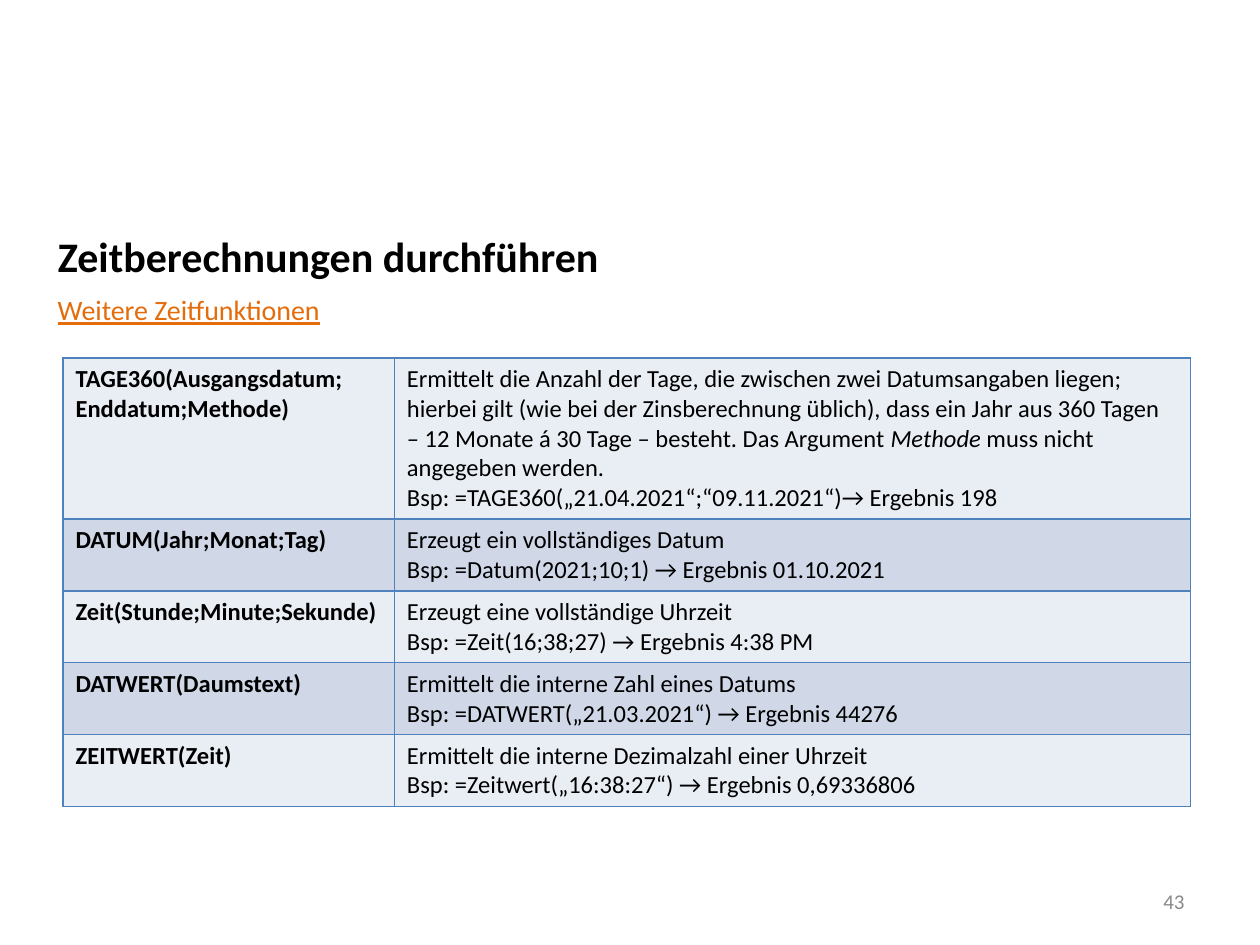
from lxml import etree
from pptx import Presentation
from pptx.dml.color import RGBColor
from pptx.enum.text import MSO_ANCHOR, PP_ALIGN
from pptx.oxml.ns import qn
from pptx.util import Inches, Pt

TOP, MIDDLE = MSO_ANCHOR.TOP, MSO_ANCHOR.MIDDLE
LEFT, RIGHT = PP_ALIGN.LEFT, PP_ALIGN.RIGHT
TITLE_ONLY = 5
FONT = "Calibri"
COLORS = {
    "text": "000000",
    "accent": "E46C0A",
    "number": "898989",
    "border": "4F81BD",
    "light": "E9EDF4",
    "dark": "D0D8E8",
}

# Function signature, then description paragraphs; each paragraph is a list of
# runs, of which every second one is italic
FUNCTIONS = [
    ("TAGE360(Ausgangsdatum; Enddatum;Methode)", [
        ["Ermittelt die Anzahl der Tage, die zwischen zwei Datumsangaben liegen; "
         "hierbei gilt (wie bei der Zinsberechnung üblich), dass ein Jahr aus "
         "360 Tagen – 12 Monate á 30 Tage – besteht. Das Argument ",
         "Methode", " muss nicht angegeben werden."],
        ["Bsp: =TAGE360(„21.04.2021“;“09.11.2021“)→ Ergebnis 198"]]),
    ("DATUM(Jahr;Monat;Tag)", [
        ["Erzeugt ein vollständiges Datum"],
        ["Bsp: =Datum(2021;10;1) → Ergebnis 01.10.2021"]]),
    ("Zeit(Stunde;Minute;Sekunde)", [
        ["Erzeugt eine vollständige Uhrzeit"],
        ["Bsp: =Zeit(16;38;27) → Ergebnis 4:38 PM"]]),
    ("DATWERT(Daumstext)", [
        ["Ermittelt die interne Zahl eines Datums"],
        ["Bsp: =DATWERT(„21.03.2021“) → Ergebnis 44276"]]),
    ("ZEITWERT(Zeit)", [
        ["Ermittelt die interne Dezimalzahl einer Uhrzeit"],
        ["Bsp: =Zeitwert(„16:38:27“) → Ergebnis 0,69336806"]]),
]


def rgb(name):
    return RGBColor.from_string(COLORS[name])


def style(paragraph, size, color="text", bold=False, align=LEFT):
    paragraph.alignment = align
    font = paragraph.font
    font.name, font.size, font.bold = FONT, Pt(size), bold
    font.color.rgb = rgb(color)


def add_heading(slide, left, top, width, height):
    heading = slide.shapes.title
    heading.left, heading.top, heading.width, heading.height = left, top, width, height
    frame = heading.text_frame
    frame.text = "Zeitberechnungen durchführen"
    frame.vertical_anchor = TOP
    style(frame.paragraphs[0], 24, bold=True)


def add_label(slide, left, top, width, height, text, size, color,
              align=LEFT, anchor=TOP):
    frame = slide.shapes.add_textbox(left, top, width, height).text_frame
    frame.word_wrap = True
    frame.vertical_anchor = anchor
    frame.text = text
    paragraph = frame.paragraphs[0]
    style(paragraph, size, color, align=align)
    return paragraph


def format_cell(cell, paragraphs, fill, bold):
    frame = cell.text_frame
    for index, runs in enumerate(paragraphs):
        paragraph = frame.add_paragraph() if index else frame.paragraphs[0]
        for position, text in enumerate(runs):
            run = paragraph.add_run()
            run.text = text
            if position % 2:
                run.font.italic = True
        style(paragraph, 14, bold=bold)
    cell.fill.solid()
    cell.fill.fore_color.rgb = rgb(fill)
    # Borders precede the fill in the cell properties
    properties = cell._tc.get_or_add_tcPr()
    for index, side in enumerate(("lnL", "lnR", "lnT", "lnB")):
        line = etree.Element(qn(f"a:{side}"), w=str(Pt(1)))
        solid = etree.SubElement(line, qn("a:solidFill"))
        etree.SubElement(solid, qn("a:srgbClr"), val=COLORS["border"])
        properties.insert(index, line)


def add_function_table(slide, left, top, width, height):
    signature_width = Inches(2.63)
    row_height = Inches(0.57)
    table = slide.shapes.add_table(len(FUNCTIONS), 2, left, top, width, height).table
    table.first_row = table.horz_banding = False
    table.columns[0].width = signature_width
    table.columns[1].width = width - signature_width
    for index, (signature, description) in enumerate(FUNCTIONS):
        # The first row takes the space the others leave
        table.rows[index].height = (
            row_height if index else height - row_height * (len(FUNCTIONS) - 1))
        fill = "dark" if index % 2 else "light"
        format_cell(table.cell(index, 0), [[signature]], fill, bold=True)
        format_cell(table.cell(index, 1), description, fill, bold=False)


def main():
    presentation = Presentation()
    presentation.slide_width = Inches(10)
    presentation.slide_height = Inches(7.5)
    slide = presentation.slides.add_slide(presentation.slide_layouts[TITLE_ONLY])

    # Heading and subheading
    add_heading(slide, Inches(0.36), Inches(1.78), Inches(9), Inches(0.49))
    subheading = add_label(slide, Inches(0.36), Inches(2.27), Inches(9.55), Inches(0.57),
                           "Weitere Zeitfunktionen", 16, "accent")
    subheading.font.underline = True

    # Time functions
    add_function_table(slide, Inches(0.5), Inches(2.84), Inches(8.95), Inches(3.56))

    # Page number
    add_label(slide, Inches(7.17), Inches(6.95), Inches(2.33), Inches(0.4),
              "43", 12, "number", RIGHT, MIDDLE)

    presentation.save("out.pptx")


if __name__ == "__main__":
    main()
